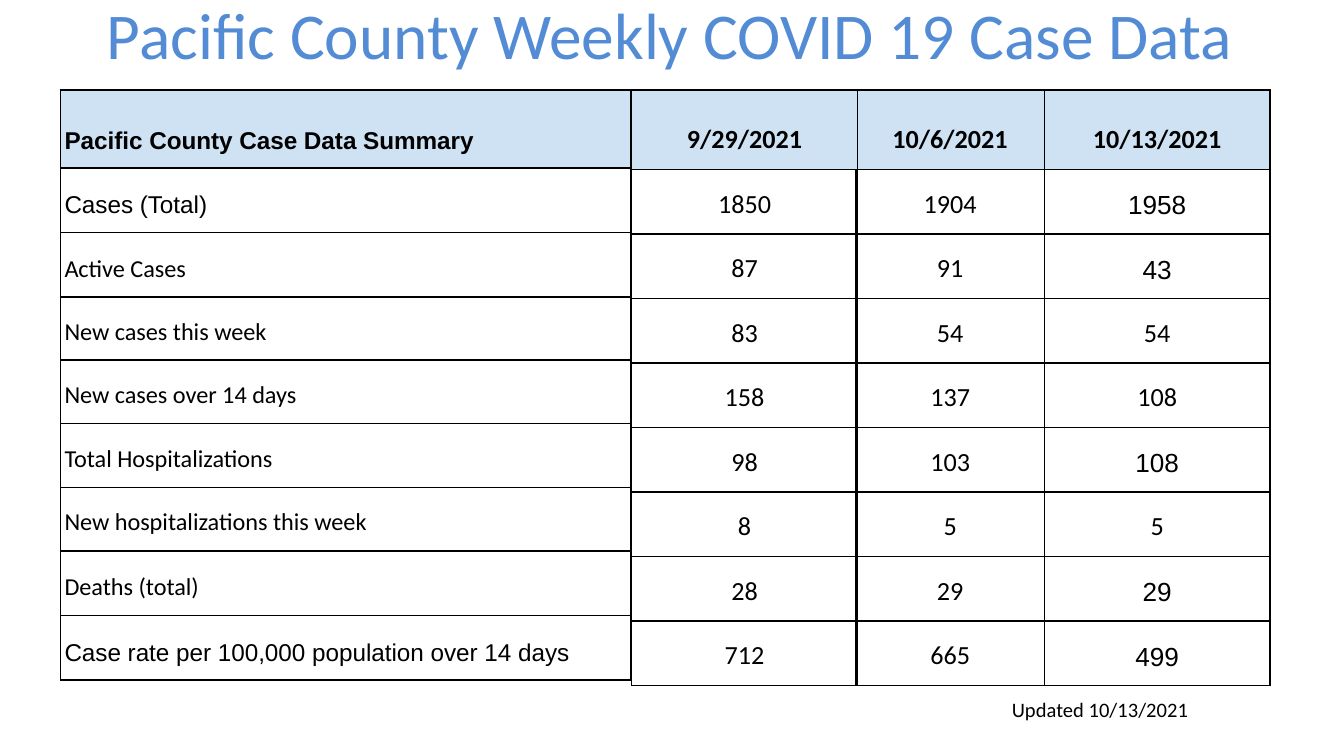
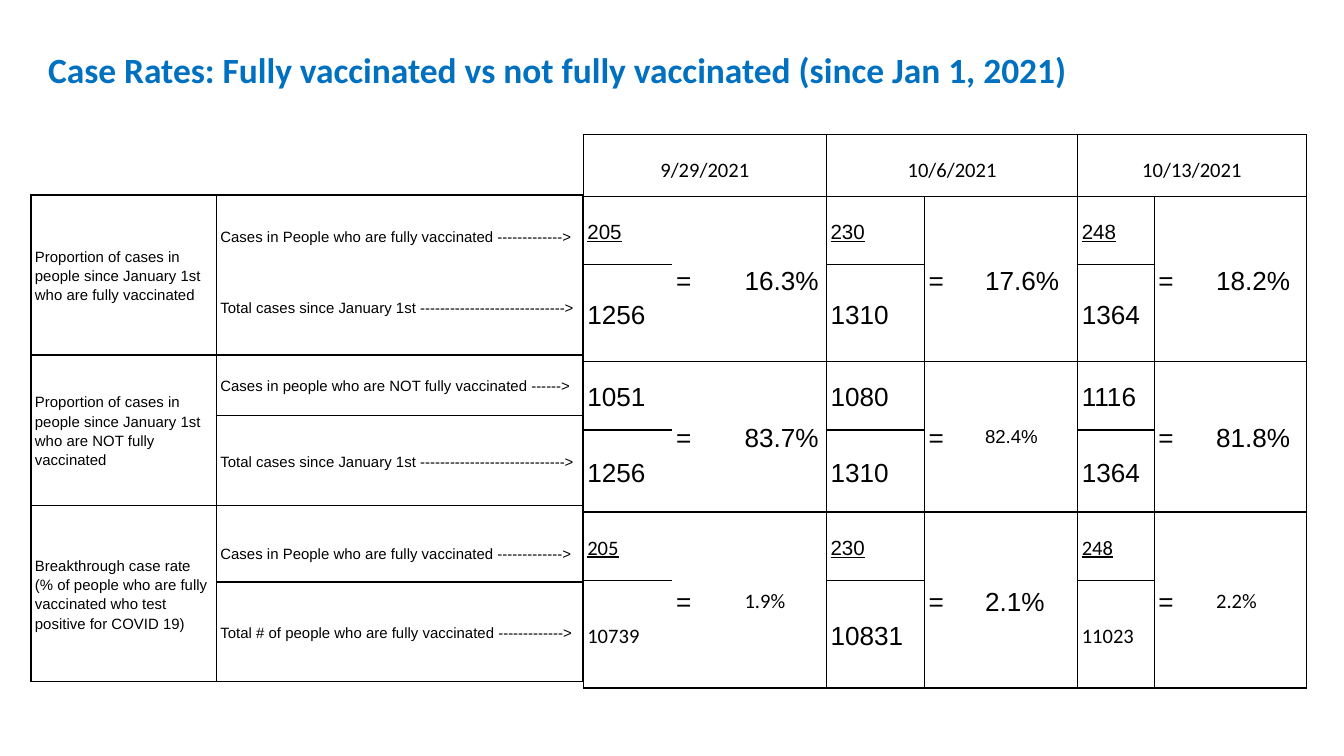
from itertools import product

from lxml import etree
from pptx import Presentation
from pptx.dml.color import RGBColor
from pptx.enum.text import MSO_ANCHOR, MSO_AUTO_SIZE, PP_ALIGN
from pptx.oxml.ns import qn
from pptx.util import Emu, Pt

LEFT, CENTER = PP_ALIGN.LEFT, PP_ALIGN.CENTER
MIDDLE, BOTTOM = MSO_ANCHOR.MIDDLE, MSO_ANCHOR.BOTTOM
GROW = MSO_AUTO_SIZE.SHAPE_TO_FIT_TEXT

PX = 9144  # 100 px to the inch
BLACK = RGBColor(0x00, 0x00, 0x00)
SKY = RGBColor(0x53, 0x8C, 0xD5)
BLUE = RGBColor(0x00, 0x70, 0xC0)
HEADER_FILL = RGBColor(0xCF, 0xE2, 0xF3)
ARIAL, CALIBRI = "Arial", "Calibri"

LABELS = [
    ("Pacific County Case Data Summary", ARIAL),
    ("Cases (Total)", ARIAL),
    ("Active Cases", CALIBRI),
    ("New cases this week", CALIBRI),
    ("New cases over 14 days", CALIBRI),
    ("Total Hospitalizations", CALIBRI),
    ("New hospitalizations this week", CALIBRI),
    ("Deaths (total)", CALIBRI),
    ("Case rate per 100,000 population over 14 days", ARIAL),
]
DATES = ["9/29/2021", "10/6/2021", "10/13/2021"]
COUNTS = [
    [DATES[0], "1850", "87", "83", "158", "98", "8", "28", "712"],
    [DATES[1], "1904", "91", "54", "137", "103", "5", "29", "665"],
    [DATES[2], "1958", "43", "54", "108", "108", "5", "29", "499"],
]
ARIAL_ROWS = {1, 2, 5, 7, 8}  # rows set in Arial in the latest week

LARGE = dict(size=14, font=ARIAL)
SMALL = dict(size=11, font=CALIBRI)
TIGHT = dict(size=10, font=ARIAL, spacing=1.0)
TOP_ARIAL = dict(size=11, font=ARIAL, underline=True)
TOP_CALIBRI = dict(size=11, font=CALIBRI, underline=True)

MEASURES = [
    ("Proportion of cases in people since January 1st who are fully vaccinated",
     "Cases in People who are fully vaccinated ------------->",
     "Total cases since January 1st ----------------------------->"),
    ("Proportion of cases in people since January 1st who are NOT fully vaccinated",
     "Cases in people who are NOT fully vaccinated ------>",
     "Total cases since January 1st ----------------------------->"),
    ("Breakthrough case rate (% of people who are fully vaccinated who test "
     "positive for COVID 19)",
     "Cases in People who are fully vaccinated ------------->",
     "Total # of people who are fully vaccinated ------------->"),
]
# For each measure and date: numerator, denominator, rate, each with its format
RATIOS = [
    [(("205", TOP_ARIAL), ("1256", LARGE), ("16.3%", LARGE)),
     (("230", TOP_ARIAL), ("1310", LARGE), ("17.6%", LARGE)),
     (("248", TOP_ARIAL), ("1364", LARGE), ("18.2%", LARGE))],
    [(("1051", LARGE), ("1256", LARGE), ("83.7%", LARGE)),
     (("1080", LARGE), ("1310", LARGE), ("82.4%", TIGHT)),
     (("1116", LARGE), ("1364", LARGE), ("81.8%", LARGE))],
    [(("205", TOP_CALIBRI), ("10739", SMALL), ("1.9%", SMALL)),
     (("230", TOP_ARIAL), ("10831", LARGE), ("2.1%", LARGE)),
     (("248", TOP_CALIBRI), ("11023", SMALL), ("2.2%", SMALL))],
]


def px(length):
    return Emu(length * PX)


def write(frame, text, size, font=CALIBRI, color=BLACK, bold=False,
          underline=False, align=LEFT, spacing=1.15):
    paragraph = frame.paragraphs[0]
    paragraph.alignment = align
    paragraph.line_spacing = spacing
    run = paragraph.add_run()
    run.text = text
    run.font.size = Pt(size)
    run.font.name = font
    run.font.color.rgb = color
    run.font.bold = bold
    run.font.underline = underline


def set_border(cell, side, weight):
    """Draw one side (L, R, T or B); a weight of 0 hides it."""
    line = etree.SubElement(cell._tc.get_or_add_tcPr(), qn(f"a:ln{side}"))
    line.set("w", str(Pt(weight)))
    if weight:
        solid = etree.SubElement(line, qn("a:solidFill"))
        etree.SubElement(solid, qn("a:srgbClr")).set("val", str(BLACK))
    else:
        etree.SubElement(line, qn("a:noFill"))


class Deck:
    def __init__(self):
        self.file = Presentation()
        self.file.slide_width = px(1000)
        self.file.slide_height = Emu(px(1000) * 9 // 16)
        self.slide = None

    def new_slide(self):
        self.slide = self.file.slides.add_slide(self.file.slide_layouts[6])

    def text(self, text, left, top, width, height, pad=10, **style):
        box = self.slide.shapes.add_textbox(px(left), px(top), px(width), px(height))
        frame = box.text_frame
        frame.word_wrap = True
        frame.auto_size = GROW
        frame.margin_left = frame.margin_right = px(10)
        frame.margin_top = frame.margin_bottom = px(pad)
        write(frame, text, spacing=1.0, **style)

    def table(self, left, top, widths, heights):
        table = self.slide.shapes.add_table(
            len(heights), len(widths), px(left), px(top),
            px(sum(widths)), px(sum(heights))).table
        table.first_row = table.horz_banding = False
        for column, width in zip(table.columns, widths):
            column.width = px(width)
        for row, height in zip(table.rows, heights):
            row.height = px(height)
        return table

    def cell(self, table, row, col, text, rows=1, cols=1, sides="LRTB", weight=1,
             fill=None, anchor=MIDDLE, pad_top=10, **style):
        """Fill a cell, merged over rows and cols, with borders on its outer sides."""
        last_row, last_col = row + rows - 1, col + cols - 1
        cell = table.cell(row, col)
        if rows * cols > 1:
            cell.merge(table.cell(last_row, last_col))
        for r, c in product(range(row, last_row + 1), range(col, last_col + 1)):
            part = table.cell(r, c)
            # The first cell of a merged area carries the borders of all of it
            first = (r, c) == (row, col)
            outer = {"L": c == col, "R": first or c == last_col,
                     "T": r == row, "B": first or r == last_row}
            for side, at_edge in outer.items():
                set_border(part, side, weight if at_edge and side in sides else 0)
            if fill:
                part.fill.solid()
                part.fill.fore_color.rgb = fill
            else:
                part.fill.background()
        cell.vertical_anchor = anchor
        cell.margin_left = cell.margin_right = px(3)
        cell.margin_top, cell.margin_bottom = px(pad_top), px(10)
        write(cell.text_frame, text, **style)


def count_table(deck, left, widths, weeks):
    """Columns of weekly counts; weeks are indexes into COUNTS."""
    table = deck.table(left, 67, widths, [59] + [48] * 8)
    for col, week in enumerate(weeks):
        for row, count in enumerate(COUNTS[week]):
            in_arial = week == 2 and row in ARIAL_ROWS
            deck.cell(table, row, col, count, anchor=BOTTOM, align=CENTER,
                      fill=None if row else HEADER_FILL, size=14, bold=row == 0,
                      font=ARIAL if in_arial else CALIBRI,
                      spacing=1.0 if in_arial else 1.15)


def case_data(deck):
    deck.new_slide()
    deck.text("Pacific County Weekly COVID 19 Case Data", 32, -9, 933, 69, pad=5,
              size=35, color=SKY, align=CENTER)
    deck.text("Updated 10/13/2021", 743, 509, 261, 39, size=11)
    summary = deck.table(45, 67, [382, 42], [58, 48, 48, 47, 47, 48, 47, 48, 48])
    for row, (label, font) in enumerate(LABELS):
        deck.cell(summary, row, 0, label, cols=2, weight=0.8, anchor=BOTTOM,
                  fill=None if row else HEADER_FILL, size=13, font=font,
                  bold=row == 0)
    count_table(deck, 637, [140, 168], [1, 2])
    count_table(deck, 470, [168], [0])


def case_rates(deck):
    deck.new_slide()
    deck.text("Case Rates: Fully vaccinated vs not fully vaccinated (since Jan 1, 2021)",
              26, 26, 962, 52, size=19, color=BLUE, bold=True)

    measures = deck.table(23, 145, [138, 273], [45, 71, 45, 67, 57, 74])
    small = dict(size=8, font=ARIAL)
    for group, (measure, numerator, denominator) in enumerate(MEASURES):
        row = 2 * group
        divided = group > 0
        deck.cell(measures, row, 0, measure, rows=2, **small)
        deck.cell(measures, row, 1, numerator, sides="LRTB" if divided else "LRT",
                  pad_top=10 if group == 1 else 23, **small)
        deck.cell(measures, row + 1, 1, denominator,
                  sides="LRTB" if divided else "LRB", **small)

    rates = deck.table(434, 100, [66, 51, 64, 73, 42, 72, 57, 43, 70],
                       [46, 51, 72, 51, 61, 51, 80])
    thin = dict(weight=0.75)
    for week, date in enumerate(DATES):
        col = 3 * week
        deck.cell(rates, 0, col, date, cols=3, anchor=BOTTOM, align=CENTER,
                  **SMALL, **thin)
        fraction_sides, equals_sides = ("LRTB", "LTB") if week else ("LTB", "TB")
        for group, ratios in enumerate(RATIOS):
            row = 2 * group + 1
            numerator, denominator, rate = ratios[week]
            for offset, (count, style) in enumerate((numerator, denominator)):
                deck.cell(rates, row + offset, col, count, sides=fraction_sides,
                          **style, **thin)
            deck.cell(rates, row, col + 1, "=", rows=2, sides=equals_sides,
                      **LARGE, **thin)
            deck.cell(rates, row, col + 2, rate[0], rows=2, sides="RTB",
                      **rate[1], **thin)


def main():
    deck = Deck()
    case_data(deck)
    case_rates(deck)
    deck.file.save("out.pptx")


if __name__ == "__main__":
    main()
